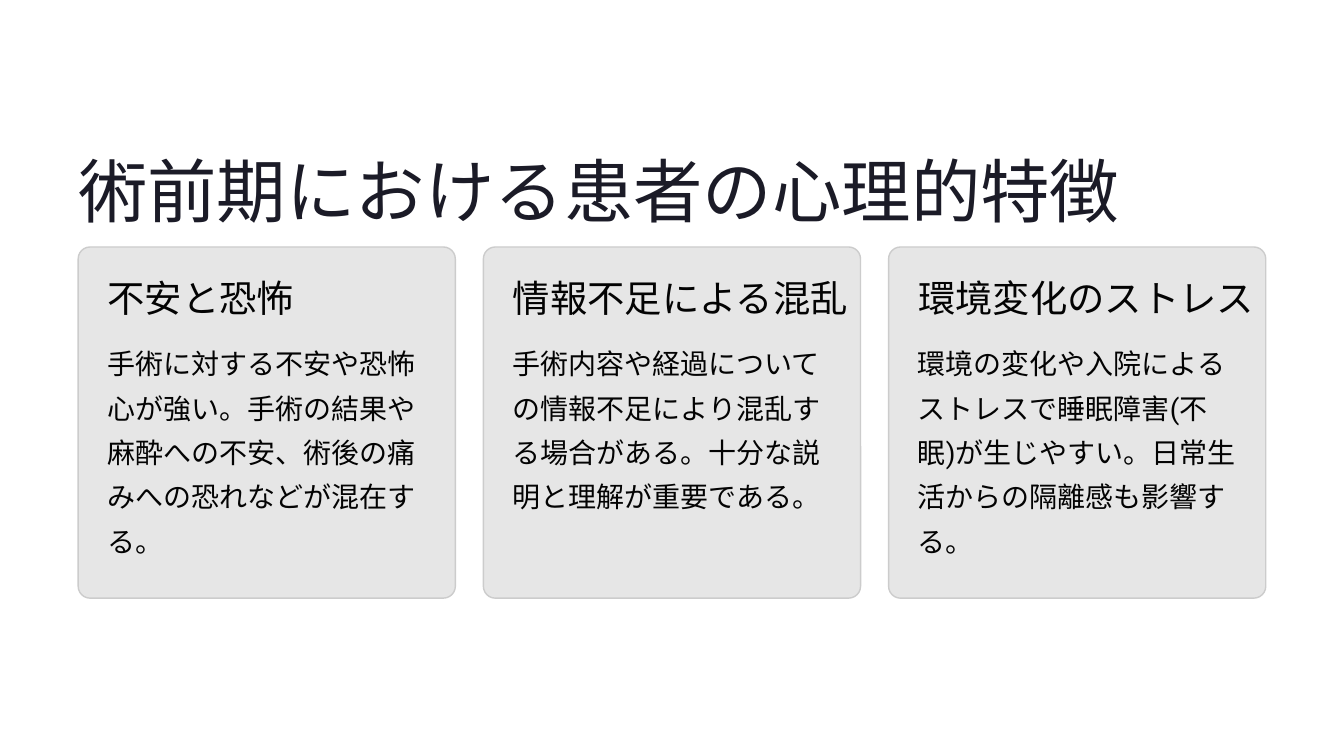
"""Build a slide of three cards on the patient's state of mind before surgery."""
from pptx import Presentation
from pptx.dml.color import RGBColor
from pptx.enum.shapes import MSO_SHAPE
from pptx.enum.text import MSO_ANCHOR, PP_ALIGN
from pptx.util import Pt

TITLE = "術前期における患者の心理的特徴"
CARDS = [
    ("不安と恐怖",
     "手術に対する不安や恐怖心が強い。手術の結果や麻酔への不安、術後の痛みへの恐れなどが混在する。"),
    ("情報不足による混乱",
     "手術内容や経過についての情報不足により混乱する場合がある。十分な説明と理解が重要である。"),
    ("環境変化のストレス",
     "環境の変化や入院によるストレスで睡眠障害(不眠)が生じやすい。日常生活からの隔離感も影響する。"),
]

THEME = {
    "fill": "E6E6E6",
    "edge": "CCCCCC",
    "title": {"font": "Inter", "size": 59.5, "lead": 74.5, "color": "1B1B27"},
    "head": {"font": "Inter", "size": 32, "lead": 37, "color": "030303"},
    "body": {"font": "Roboto", "size": 24, "lead": 38, "color": "030303"},
}

WIDE, HIGH = 1152, 648
LEFT, TOP = 67, 211.7
GAP, PAD = 24, 25.2
CARD_W = (WIDE - 2 * LEFT - GAP * (len(CARDS) - 1)) / len(CARDS)
CARD_H = 301
BODY_Y = 288


def add_text(slide, text, x, y, w, h, *, font, size, lead, color, wrap=False):
    box = slide.shapes.add_textbox(Pt(x), Pt(y), Pt(w), Pt(h))
    frame = box.text_frame
    frame.word_wrap = wrap
    frame.vertical_anchor = MSO_ANCHOR.TOP
    frame.margin_left = frame.margin_right = Pt(0)
    frame.margin_top = frame.margin_bottom = Pt(0)
    para = frame.paragraphs[0]
    para.alignment = PP_ALIGN.LEFT
    para.line_spacing = Pt(lead)
    run = para.add_run()
    run.text = text
    run.font.name = font
    run.font.size = Pt(size)
    run.font.color.rgb = RGBColor.from_string(color)


def add_card(slide, x, head, body):
    card = slide.shapes.add_shape(
        MSO_SHAPE.ROUNDED_RECTANGLE, Pt(x), Pt(TOP), Pt(CARD_W), Pt(CARD_H))
    card.adjustments[0] = 0.034
    card.shadow.inherit = False
    card.fill.solid()
    card.fill.fore_color.rgb = RGBColor.from_string(THEME["fill"])
    card.line.color.rgb = RGBColor.from_string(THEME["edge"])
    card.line.width = Pt(1.2)
    add_text(slide, head, x + PAD, TOP + PAD, CARD_W - PAD, 38,
             **THEME["head"])
    add_text(slide, body, x + PAD, BODY_Y, CARD_W - 2 * PAD,
             TOP + CARD_H - PAD - BODY_Y, wrap=True, **THEME["body"])


def main():
    deck = Presentation()
    deck.slide_width, deck.slide_height = Pt(WIDE), Pt(HIGH)
    slide = deck.slides.add_slide(deck.slide_layouts[6])
    add_text(slide, TITLE, LEFT, 123.8, 895, 75, **THEME["title"])
    for i, (head, body) in enumerate(CARDS):
        add_card(slide, LEFT + i * (CARD_W + GAP), head, body)
    deck.save("out.pptx")


if __name__ == "__main__":
    main()
